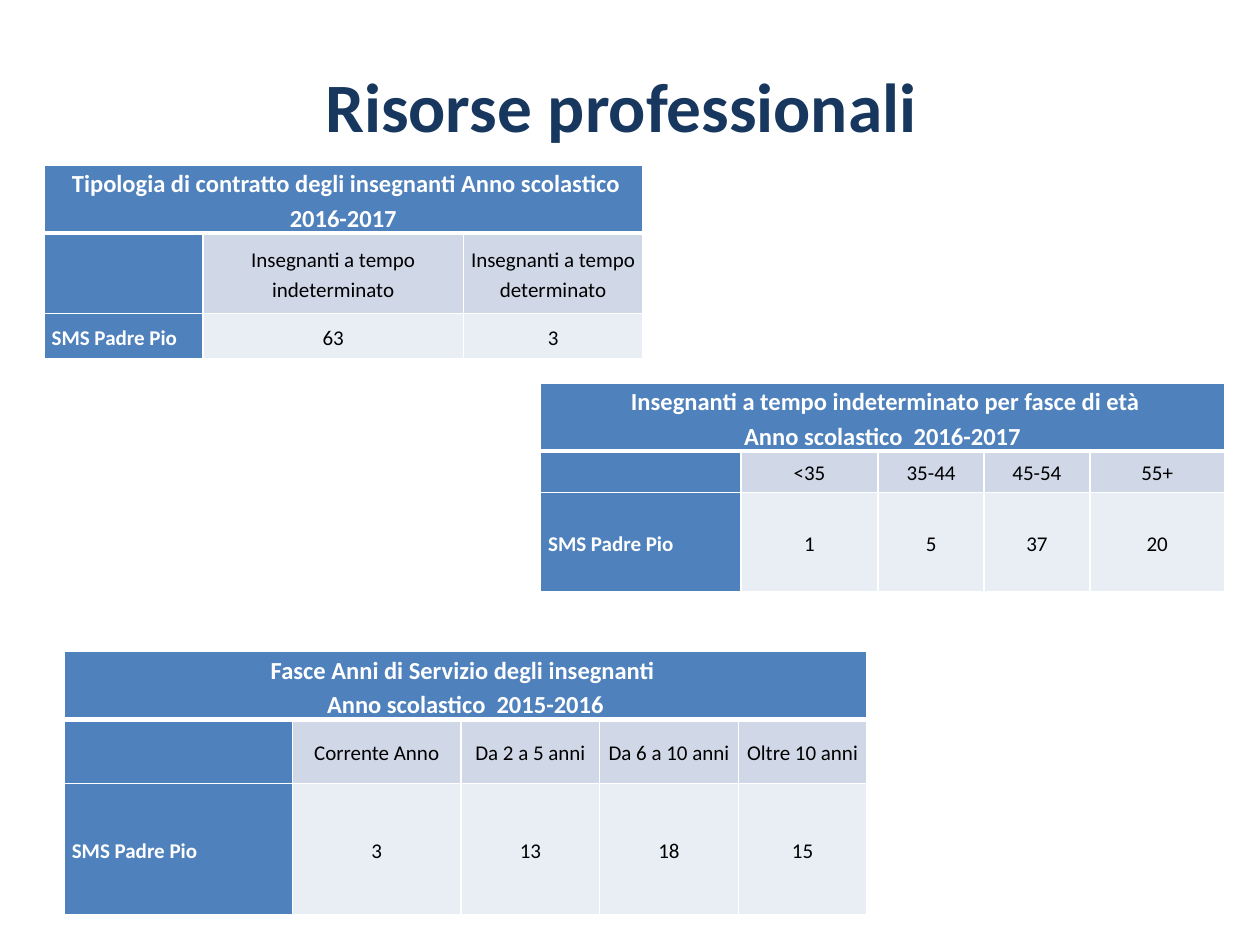
from lxml import etree
from pptx import Presentation
from pptx.dml.color import RGBColor
from pptx.enum import text
from pptx.oxml import ns
from pptx.util import Inches, Pt

FONT = "Calibri"
NAVY = RGBColor(0x17, 0x37, 0x5E)
BLUE = RGBColor(0x4F, 0x81, 0xBD)
PALE = RGBColor(0xD0, 0xD8, 0xE8)
PALEST = RGBColor(0xE9, 0xED, 0xF4)
WHITE = RGBColor(0xFF, 0xFF, 0xFF)
BLACK = RGBColor(0, 0, 0)

CENTER, LEFT = text.PP_ALIGN.CENTER, text.PP_ALIGN.LEFT
SCHOOL = "SMS Padre Pio"


class SlideBuilder:
    def __init__(self, slide):
        self.s = slide

    def format(self, p, size, color, bold, align=CENTER):
        p.alignment = align
        p.font.name, p.font.size = FONT, Pt(size)
        p.font.bold, p.font.color.rgb = bold, color

    def title(self, words, x, y, w, h):
        tf = self.s.shapes.add_textbox(Inches(x), Inches(y), Inches(w), Inches(h)).text_frame
        tf.word_wrap = True
        tf.vertical_anchor = text.MSO_ANCHOR.MIDDLE
        tf.text = words
        self.format(tf.paragraphs[0], 39.6, NAVY, True)

    def borders(self, cell, row):
        widths = {"lnL": 1, "lnR": 1, "lnT": 3 if row == 1 else 1, "lnB": 3 if row == 0 else 1}
        tc_pr = cell._tc.get_or_add_tcPr()
        for i, (side, width) in enumerate(widths.items()):
            ln = etree.Element(ns.qn(f"a:{side}"), w=str(Pt(width)))
            fill = etree.SubElement(ln, ns.qn("a:solidFill"))
            etree.SubElement(fill, ns.qn("a:srgbClr"), val=str(WHITE))
            tc_pr.insert(i, ln)

    def cell(self, cell, words, row, col):
        label = row == 0 or col == 0
        margin = Inches(0.06 if row == 2 and col == 0 else 0)
        cell.margin_left = cell.margin_right = margin
        cell.margin_top = cell.margin_bottom = margin
        cell.vertical_anchor = text.MSO_ANCHOR.MIDDLE
        cell.fill.solid()
        cell.fill.fore_color.rgb = BLUE if label else (PALE if row == 1 else PALEST)
        self.borders(cell, row)
        cell.text = words
        for p in cell.text_frame.paragraphs:
            self.format(p, 14 if row == 0 else 12, WHITE if label else BLACK, label,
                        LEFT if row and col == 0 else CENTER)
            if words:
                p.line_spacing = 1.15

    def table(self, x, y, cols, rows, heading, names, values):
        """Merged heading row, then column names, then one row for the school."""
        frame = self.s.shapes.add_table(len(rows), len(cols), Inches(x), Inches(y),
                                        Inches(sum(cols)), Inches(sum(rows)))
        tbl = frame.table
        for column, width in zip(tbl.columns, cols):
            column.width = Inches(width)
        for row, height in zip(tbl.rows, rows):
            row.height = Inches(height)
        grid = [[heading] + [""] * len(names), [""] + names, [SCHOOL] + values]
        for r, line in enumerate(grid):
            for c, words in enumerate(line):
                self.cell(tbl.cell(r, c), words, r, c)
        tbl.cell(0, 0).merge(tbl.cell(0, len(cols) - 1))


def main():
    prs = Presentation()
    prs.slide_width, prs.slide_height = Inches(10), Inches(7.5)
    b = SlideBuilder(prs.slides.add_slide(prs.slide_layouts[6]))

    b.title("Risorse professionali", 0.43, 0.21, 9, 1.25)

    # Contract types
    b.table(0.35, 1.31, [1.26, 2.07, 1.42], [0.54, 0.64, 0.36],
            "  Tipologia di contratto degli insegnanti Anno scolastico  2016-2017",
            ["Insegnanti a tempo indeterminato", "Insegnanti a tempo determinato"],
            ["63", "3"])

    # Age bands
    b.table(4.29, 3.04, [1.59, 1.09, 0.84, 0.84, 1.07], [0.54, 0.33, 0.79],
            "  Insegnanti a tempo indeterminato per fasce di età \vAnno scolastico  2016-2017",
            ["<35", "35-44", "45-54", "55+"], ["1", "5", "37", "20"])

    # Years of service
    b.table(0.51, 5.17, [1.81, 1.34, 1.1, 1.1, 1.02], [0.54, 0.51, 1.04],
            "Fasce Anni di Servizio degli insegnanti \nAnno scolastico  2015-2016",
            ["Corrente Anno", "Da 2 a 5 anni", "Da 6 a 10 anni", "Oltre 10 anni"],
            ["3", "13", "18", "15"])

    prs.save("out.pptx")


if __name__ == "__main__":
    main()
